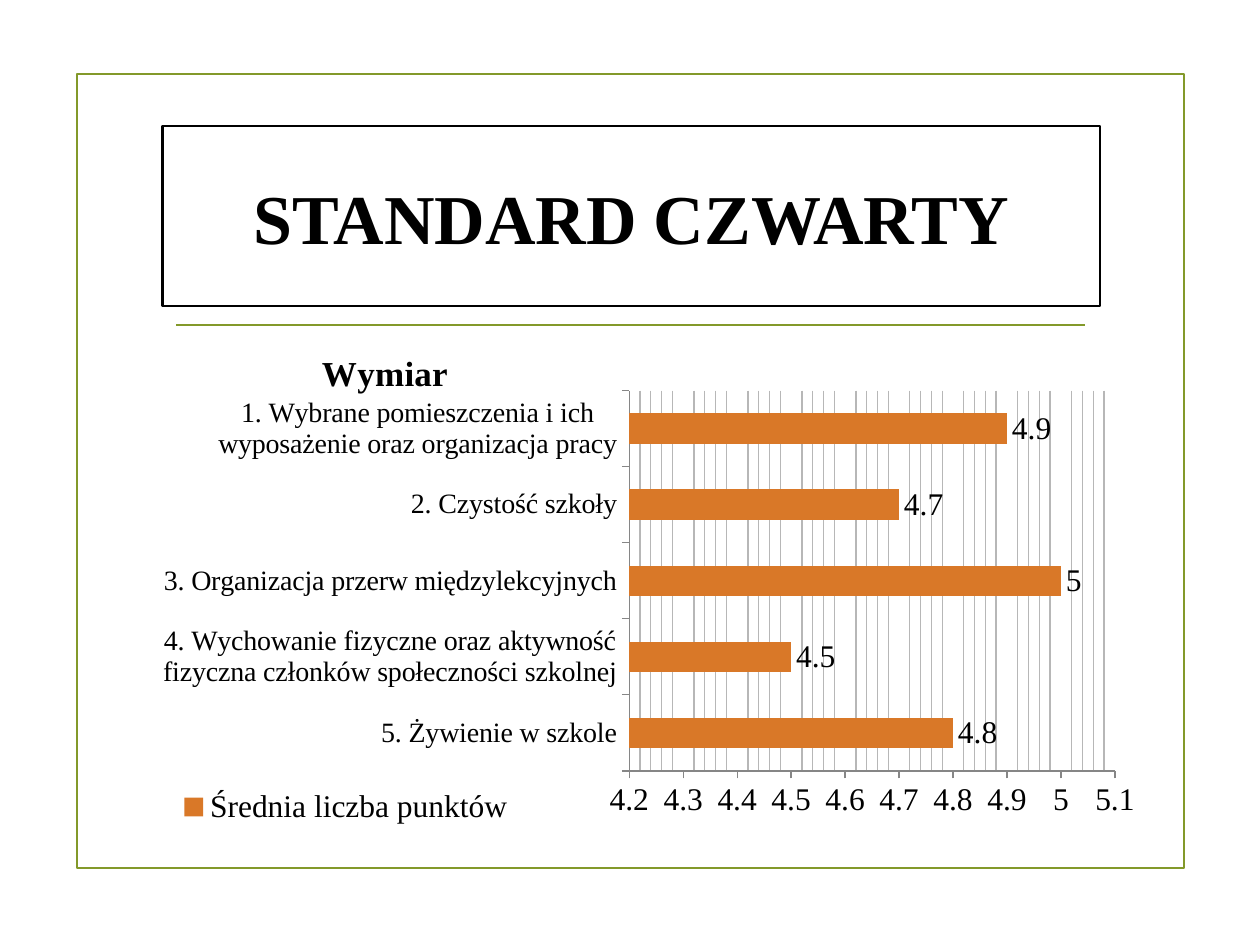
from pptx import Presentation
from pptx.chart.data import CategoryChartData
from pptx.dml.color import RGBColor
from pptx.enum.chart import XL_CHART_TYPE, XL_LABEL_POSITION, XL_LEGEND_POSITION, XL_TICK_MARK
from pptx.enum.shapes import MSO_CONNECTOR, MSO_SHAPE
from pptx.enum.text import MSO_ANCHOR, PP_ALIGN
from pptx.oxml import parse_xml
from pptx.oxml.ns import nsdecls, qn
from pptx.util import Inches, Pt

BAR = XL_CHART_TYPE.BAR_CLUSTERED
OUTSIDE_END = XL_LABEL_POSITION.OUTSIDE_END
LEGEND_RIGHT = XL_LEGEND_POSITION.RIGHT
TICK_OUTSIDE = XL_TICK_MARK.OUTSIDE
STRAIGHT = MSO_CONNECTOR.STRAIGHT
RECTANGLE = MSO_SHAPE.RECTANGLE
MIDDLE = MSO_ANCHOR.MIDDLE
CENTER = PP_ALIGN.CENTER

COLORS = {
    "green": "83992A",
    "orange": "D97828",
    "black": "000000",
    "white": "FFFFFF",
    "axis": "868686",
    "grid": "B7B7B7",
}
SCORES = {
    "5. Żywienie w szkole": 4.8,
    "4. Wychowanie fizyczne oraz aktywność fizyczna członków społeczności szkolnej": 4.5,
    "3. Organizacja przerw międzylekcyjnych": 5,
    "2. Czystość szkoły": 4.7,
    "1. Wybrane pomieszczenia i ich wyposażenie oraz organizacja pracy": 4.9,
}


class SlideBuilder:
    """Holds the style and the current slide, and draws each kind of element."""

    def __init__(self, slide, font_name, line_width):
        self.slide = slide
        self.font_name = font_name
        self.line_width = Pt(line_width)

    def color(self, name):
        return RGBColor.from_string(COLORS[name])

    def style_font(self, font, size, bold=False):
        font.name = self.font_name
        font.size = Pt(size)
        font.bold = bold
        font.color.rgb = self.color("black")

    def style_line(self, line, color, width=None):
        line.color.rgb = self.color(color)
        line.width = width or self.line_width

    def box(self, left, top, width, height, line, fill=None):
        shape = self.slide.shapes.add_shape(
            RECTANGLE, Inches(left), Inches(top), Inches(width), Inches(height))
        shape.shadow.inherit = False
        if fill:
            shape.fill.solid()
            shape.fill.fore_color.rgb = self.color(fill)
        else:
            shape.fill.background()
        self.style_line(shape.line, line)
        return shape

    def title(self, shape, text, size):
        frame = shape.text_frame
        frame.word_wrap = True
        frame.vertical_anchor = MIDDLE
        paragraph = frame.paragraphs[0]
        paragraph.alignment = CENTER
        run = paragraph.add_run()
        run.text = text
        self.style_font(run.font, size, bold=True)

    def rule(self, left, right, top, color):
        connector = self.slide.shapes.add_connector(
            STRAIGHT, Inches(left), Inches(top), Inches(right), Inches(top))
        self.style_line(connector.line, color)
        connector._element.spPr.append(parse_xml(f"<a:effectLst {nsdecls('a')}/>"))

    def place(self, element, index, inner=False, **fractions):
        for old in element.findall(qn("c:layout")):
            element.remove(old)
        target = '<c:layoutTarget val="inner"/>' if inner else ""
        modes = '<c:xMode val="edge"/><c:yMode val="edge"/>'
        sizes = "".join(f'<c:{key} val="{value}"/>' for key, value in fractions.items())
        element.insert(index, parse_xml(
            f"<c:layout {nsdecls('c')}><c:manualLayout>{target}{modes}{sizes}"
            "</c:manualLayout></c:layout>"))

    def chart(self, left, top, width, height, scores, series_name, title):
        data = CategoryChartData(number_format="General")
        data.categories = list(scores)
        data.add_series(series_name, list(scores.values()))
        chart = self.slide.shapes.add_chart(
            BAR, Inches(left), Inches(top), Inches(width), Inches(height), data).chart
        self.style_font(chart.font, 18)
        self.chart_title(chart, title)
        self.chart_legend(chart)
        self.chart_bars(chart.plots[0])
        self.chart_axes(chart)
        plot_area = chart._chartSpace.chart.plotArea
        self.place(plot_area, 0, inner=True, x=0.49, y=0.13, w=0.48, h=0.74)

    def chart_title(self, chart, text):
        chart.has_title = True
        run = chart.chart_title.text_frame.paragraphs[0].add_run()
        run.text = text
        self.style_font(run.font, 20, bold=True)
        self.place(chart.chart_title._element, 1, x=0.18, y=0.04)

    def chart_legend(self, chart):
        chart.has_legend = True
        chart.legend.position = LEGEND_RIGHT
        chart.legend.include_in_layout = False
        self.style_font(chart.legend.font, 18)
        self.place(chart.legend._element, 1, x=0.03, y=0.88, w=0.36, h=0.12)

    def chart_bars(self, plot):
        plot.gap_width = 150
        plot.vary_by_categories = False
        fill = plot.series[0].format.fill
        fill.solid()
        fill.fore_color.rgb = self.color("orange")
        plot.has_data_labels = True
        labels = plot.data_labels
        labels.show_value = True
        labels.position = OUTSIDE_END
        self.style_font(labels.font, 18)

    def chart_axes(self, chart):
        for axis, size in ((chart.category_axis, 16), (chart.value_axis, 18)):
            axis.major_tick_mark = TICK_OUTSIDE
            self.style_font(axis.tick_labels.font, size)
            self.style_line(axis.format.line, "axis", Pt(0.75))
        values = chart.value_axis
        values.minimum_scale, values.maximum_scale = 4.2, 5.1
        values.major_unit, values.minor_unit = 0.1, 0.02
        values.has_major_gridlines = False
        values.has_minor_gridlines = True
        gridlines = values._element.find(qn("c:minorGridlines"))
        gridlines.append(parse_xml(
            f'<c:spPr {nsdecls("c", "a")}><a:ln w="{Pt(0.75)}"><a:solidFill>'
            f'<a:srgbClr val="{COLORS["grid"]}"/></a:solidFill></a:ln></c:spPr>'))


def main():
    presentation = Presentation()
    presentation.slide_width = Inches(10)
    presentation.slide_height = Inches(7.5)
    slide = presentation.slides.add_slide(presentation.slide_layouts[6])
    builder = SlideBuilder(slide, "Times New Roman", 1.25)
    builder.box(0.61, 0.59, 8.79, 6.3, "green")
    builder.rule(1.4, 8.61, 2.58, "green")
    title_box = builder.box(1.29, 1, 7.44, 1.43, "black", "white")
    builder.title(title_box, "STANDARD CZWARTY", 40)
    builder.chart(1.06, 2.57, 8.03, 4.08, SCORES, "Średnia liczba punktów", "Wymiar")
    presentation.save("out.pptx")


if __name__ == "__main__":
    main()
